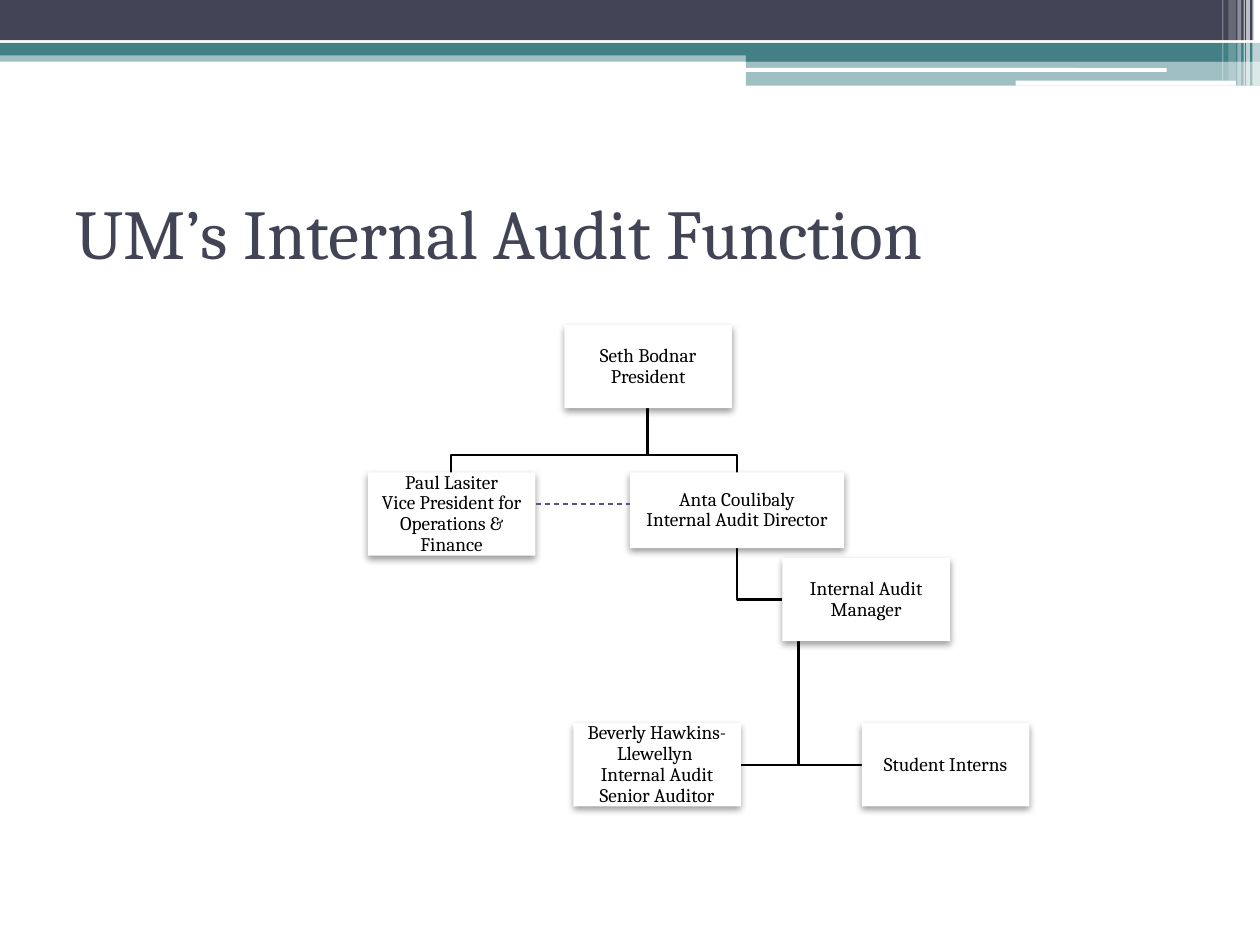
from lxml import etree
from pptx import Presentation
from pptx import util as u
from pptx.dml.color import RGBColor
from pptx.enum import dml, shapes, text
from pptx.oxml.ns import qn

PX = 9144  # 100 px to the inch

THEME = {
    "font": "Cambria", "title_size": 40, "box_size": 11,
    "navy": "424456", "teal": "438086", "white": "FFFFFF",
    "black": "000000", "violet": "53548A",
}

TITLE = "UM’s Internal Audit Function"
TITLE_AREA = (50, 125, 900, 117)

# left, top, width, height, colour, opacity in percent
BANDS = [
    (0, 40, 1000, 9, "teal", 50),
    (-5, -2, 1000, 34, "navy", 100),
    (0, 34, 1000, 10, "teal", 100),
    (592, 39, 408, 10, "teal", 100),
    (592, 48, 408, 20, "teal", 50),
]
ROUNDED_BARS = [
    (591, 54, 335, 3, "white", 100),
    (806, 64, 175, 4, "white", 100),
]
# left, width, height, opacity in percent
STRIPES = [
    (994, 6, 68, 65), (989, 3, 68, 65), (987, 1, 68, 60),
    (982, 3, 68, 40), (975, 6, 64, 20), (970, 1, 64, 30),
]

# left, top, width, height, wording
BOXES = {
    "president": (448, 258, 133, 66, "Seth Bodnar\nPresident"),
    "vice_president": (292, 375, 133, 66,
                       "Paul Lasiter\nVice President for Operations & Finance"),
    "director": (500, 375, 170, 60, "Anta Coulibaly\nInternal Audit Director"),
    "manager": (621, 443, 133, 66, "Internal Audit Manager"),
    "auditor": (455, 574, 133, 66,
                "Beverly Hawkins-Llewellyn \nInternal Audit\nSenior Auditor"),
    "interns": (684, 574, 133, 66, "Student Interns"),
}
BRANCHES = [("president", "director"), ("president", "vice_president")]
# parent, child, side of the child that is met, share of parent width at the drop
SIDE_LINKS = [
    ("manager", "interns", "left", 0.1),
    ("manager", "auditor", "right", 0.1),
    ("director", "manager", "left", 0.5),
]
BRANCH_LEVEL = 361
DOTTED_LEVEL = 400


def colour(name):
    return RGBColor.from_string(THEME[name])


def assign(target, values):
    for name, value in values.items():
        setattr(target, name, value)


def edges(name):
    left, top, width, height, _ = BOXES[name]
    return {"left": left, "right": left + width, "top": top,
            "bottom": top + height, "centre": left + width / 2,
            "middle": top + height / 2}


def add_block(slide, kind, area, fill, opacity=100):
    shape = slide.shapes.add_shape(kind, *(length * PX for length in area))
    shape.shadow.inherit = False
    shape.fill.solid()
    shape.fill.fore_color.rgb = colour(fill)
    shape.line.fill.background()
    if opacity < 100:
        colour_node = shape.fill._xPr.find(".//" + qn("a:srgbClr"))
        etree.SubElement(colour_node, qn("a:alpha"), val=str(opacity * 1000))
    return shape


def write(shape, words, size, ink, alignment, inset=None, spacing=None):
    frame = shape.text_frame
    assign(frame, {"word_wrap": True, "vertical_anchor": text.MSO_ANCHOR.MIDDLE})
    if inset is not None:
        sides = ("left", "right", "top", "bottom")
        assign(frame, {f"margin_{side}": inset * PX for side in sides})
    paragraph = frame.paragraphs[0]
    paragraph.text = words
    assign(paragraph, {"alignment": alignment, "line_spacing": spacing})
    for run in paragraph.runs:
        assign(run.font, {"name": THEME["font"], "size": u.Pt(THEME[size])})
        run.font.color.rgb = colour(ink)


def add_soft_shadow(shape):
    effects = shape._element.spPr.find(qn("a:effectLst"))
    shadow = etree.SubElement(
        effects, qn("a:outerShdw"), blurRad=str(u.Pt(4.1)), dist=str(u.Pt(2)),
        dir="5400000", rotWithShape="0")
    ink = etree.SubElement(shadow, qn("a:srgbClr"), val=THEME["black"])
    etree.SubElement(ink, qn("a:alpha"), val="40000")


def add_elbow(slide, points):
    builder = slide.shapes.build_freeform(*points[0], scale=PX)
    builder.add_line_segments(points[1:], close=False)
    shape = builder.convert_to_shape()
    shape.shadow.inherit = False
    shape.fill.background()
    shape.line.color.rgb = colour("black")
    shape.line.width = u.Pt(1.5)


def add_header(slide):
    for *area, fill, opacity in BANDS:
        add_block(slide, shapes.MSO_SHAPE.RECTANGLE, area, fill, opacity)
    for *area, fill, opacity in ROUNDED_BARS:
        add_block(slide, shapes.MSO_SHAPE.ROUNDED_RECTANGLE, area, fill, opacity)
    for left, width, height, opacity in STRIPES:
        add_block(slide, shapes.MSO_SHAPE.RECTANGLE, (left, 0, width, height),
                  "white", opacity)


def add_links(slide):
    for parent_name, child_name, side, share in SIDE_LINKS:
        parent, child = edges(parent_name), edges(child_name)
        drop = parent["left"] + share * (parent["right"] - parent["left"])
        add_elbow(slide, [(drop, parent["bottom"]), (drop, child["middle"]),
                          (child[side], child["middle"])])
    for parent_name, child_name in BRANCHES:
        parent, child = edges(parent_name), edges(child_name)
        add_elbow(slide, [(parent["centre"], parent["bottom"]),
                          (parent["centre"], BRANCH_LEVEL),
                          (child["centre"], BRANCH_LEVEL),
                          (child["centre"], child["top"])])


def add_boxes(slide):
    for *area, words in BOXES.values():
        box = add_block(slide, shapes.MSO_SHAPE.RECTANGLE, area, "white")
        add_soft_shadow(box)
        write(box, words, "box_size", "black", text.PP_ALIGN.CENTER,
              inset=1, spacing=0.9)


def add_dotted_link(slide):
    start, end = edges("vice_president")["right"], edges("director")["left"]
    link = slide.shapes.add_connector(
        shapes.MSO_CONNECTOR.STRAIGHT,
        *(length * PX for length in (start, DOTTED_LEVEL, end, DOTTED_LEVEL)))
    link.line.color.rgb = colour("violet")
    assign(link.line, {"width": u.Pt(0.75), "dash_style": dml.MSO_LINE.DASH})
    etree.SubElement(link._element.spPr, qn("a:effectLst"))


def main():
    presentation = Presentation()
    assign(presentation, {"slide_width": 1000 * PX, "slide_height": 750 * PX})
    slide = presentation.slides.add_slide(presentation.slide_layouts[6])
    add_header(slide)
    title = slide.shapes.add_textbox(*(length * PX for length in TITLE_AREA))
    write(title, TITLE, "title_size", "navy", text.PP_ALIGN.LEFT)
    add_links(slide)
    add_boxes(slide)
    add_dotted_link(slide)
    presentation.save("out.pptx")


if __name__ == "__main__":
    main()
